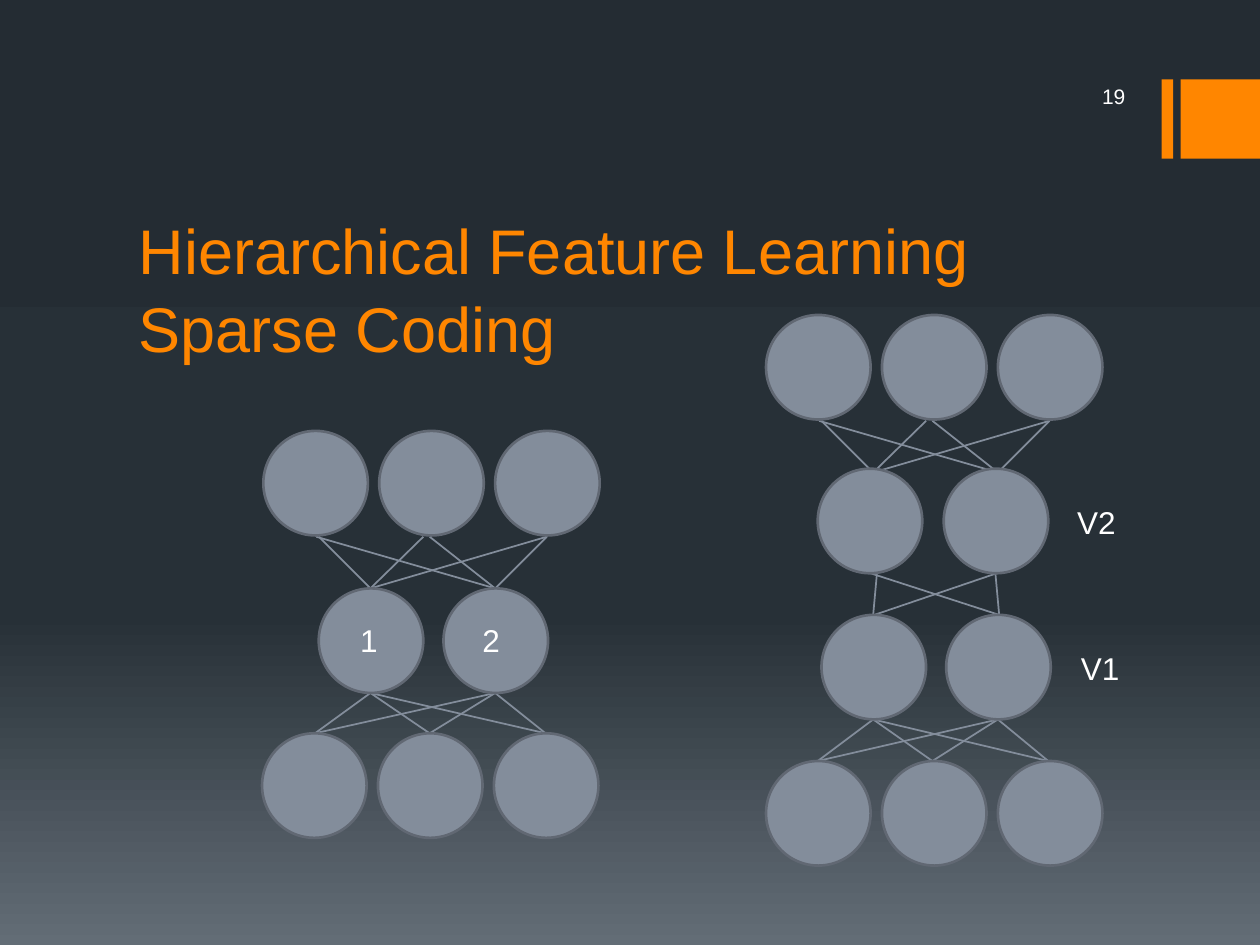
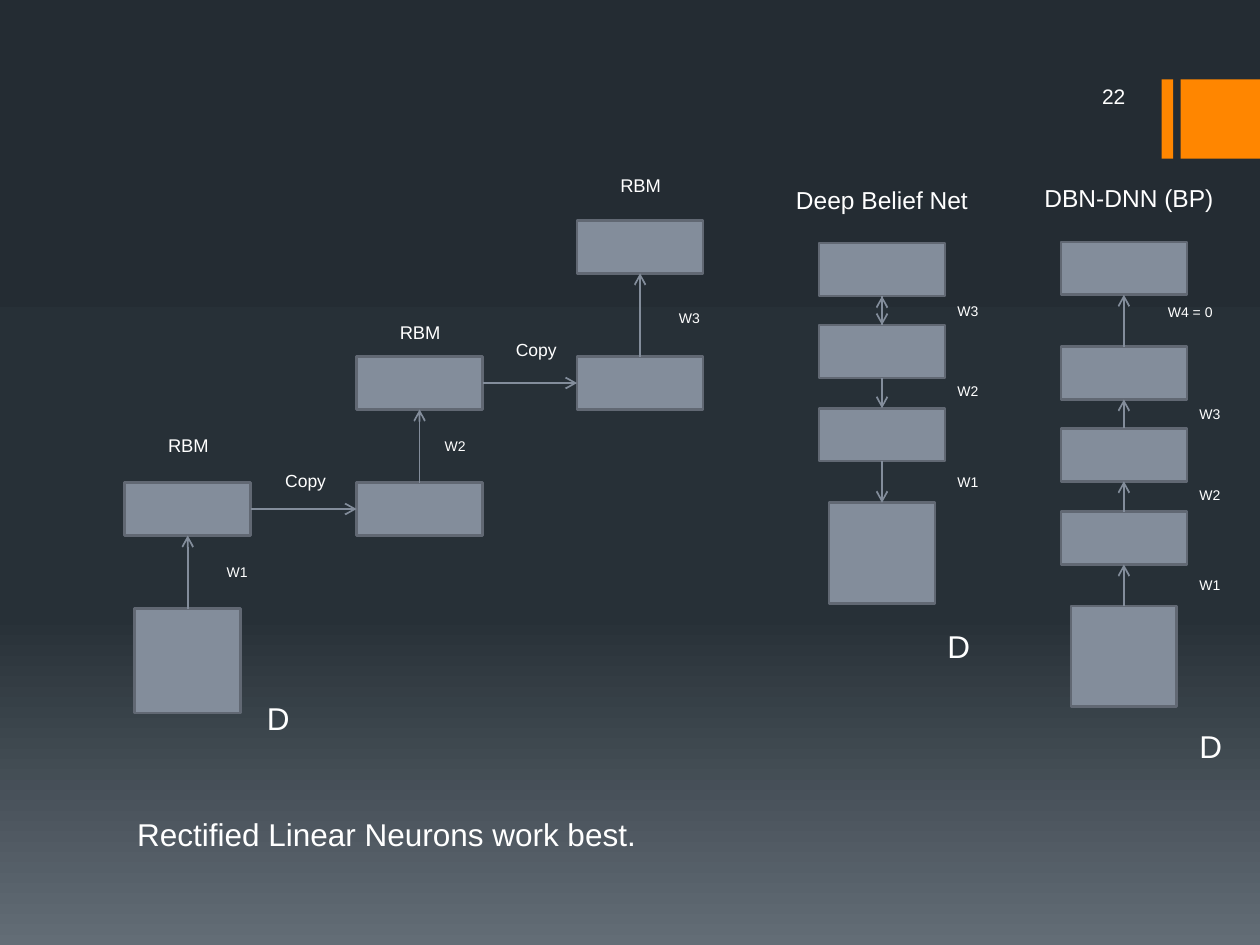
from copy import deepcopy

from pptx import Presentation
from pptx.dml.color import RGBColor
from pptx.enum.shapes import MSO_CONNECTOR as Connector
from pptx.enum.shapes import MSO_SHAPE as Preset
from pptx.enum.text import MSO_ANCHOR as Anchor
from pptx.enum.text import PP_ALIGN as Align
from pptx.oxml.ns import qn
from pptx.oxml.xmlchemy import OxmlElement
from pptx.util import Emu, Pt

PX = 9144
FONT = "Arial"
ORANGE = RGBColor(0xFF, 0x86, 0x00)
WHITE = RGBColor(0xFF, 0xFF, 0xFF)
NODE_FILL = RGBColor(0x83, 0x8D, 0x9B)
NODE_LINE = RGBColor(0x61, 0x68, 0x73)
BACKGROUND_STOPS = (
    (0, RGBColor(0x24, 0x2C, 0x33)),
    (0.65, RGBColor(0x27, 0x30, 0x37)),
    (1, RGBColor(0x63, 0x6D, 0x76)),
)

TOP, LEFT, BOTTOM, RIGHT = range(4)
CIRCLE = 83
BOX_WIDTH, BOX_HEIGHT = 100, 42
DATA_WIDTH = 84
DATA_INSET = (BOX_WIDTH - DATA_WIDTH) // 2

UPPER_STRANDS = ((45, 86), (43, 185), (128, 86), (226, 86), (133, 185), (226, 185))
MIDDLE_STRANDS = ((89, 86), (184, 87), (84, 186), (183, 186))
LOWER_STRANDS = ((86, 42), (185, 42), (86, 133), (185, 133), (185, 225), (86, 225))


def px(*lengths):
    return [Emu(length * PX) for length in lengths]


def format_text(text_frame, size, color=WHITE, align=Align.LEFT):
    for paragraph in text_frame.paragraphs:
        paragraph.alignment = align
        for run in paragraph.runs:
            run.font.name = FONT
            run.font.size = Pt(size)
            run.font.color.rgb = color


def add_label(slide, text, left, top, width, height, size, align=Align.LEFT):
    label = slide.shapes.add_textbox(*px(left, top, width, height))
    text_frame = label.text_frame
    text_frame.word_wrap = True
    text_frame.text = text
    format_text(text_frame, size, align=align)
    return label


def add_node(slide, preset, left, top, width, height):
    node = slide.shapes.add_shape(preset, *px(left, top, width, height))
    node.shadow.inherit = False
    node.fill.solid()
    node.fill.fore_color.rgb = NODE_FILL
    node.line.color.rgb = NODE_LINE
    node.line.width = Pt(1.5)
    return node


def add_box(slide, left, top):
    return add_node(slide, Preset.RECTANGLE, left, top, BOX_WIDTH, BOX_HEIGHT)


def add_line(slide, *ends):
    line = slide.shapes.add_connector(Connector.STRAIGHT, *px(*ends))
    line.line.color.rgb = NODE_FILL
    line.line.width = Pt(1)
    line.element.spPr.append(OxmlElement("a:effectLst"))
    return line


def add_arrow(slide, source, source_side, target, target_side):
    arrow = add_line(slide, 0, 0, 0, 0)
    arrow.begin_connect(source, source_side)
    arrow.end_connect(target, target_side)
    tail = OxmlElement("a:tailEnd")
    tail.set("type", "arrow")
    arrow.line._get_or_add_ln().append(tail)


def set_background(master):
    fill = master.background.fill
    fill.gradient()
    fill.gradient_angle = 270
    stop_list = next(master.element.cSld.iter(qn("a:gsLst")))
    stop_list.append(deepcopy(stop_list[0]))
    for stop, (position, color) in zip(fill.gradient_stops, BACKGROUND_STOPS):
        stop.position = position
        stop.color.rgb = color


def add_master_bands(master, slide):
    for shape_id, (left, width) in enumerate(((922, 9), (937, 63)), 101):
        band = slide.shapes.add_shape(Preset.RECTANGLE, *px(left, 63, width, 63))
        band.shadow.inherit = False
        band.fill.solid()
        band.fill.fore_color.rgb = ORANGE
        band.line.fill.background()
        band.element.nvSpPr.cNvPr.set("id", str(shape_id))
        master.shapes.element.append(band.element)


def add_page_number(slide, number):
    label = add_label(slide, str(number), 800, 60, 103, 33, 12, Align.RIGHT)
    label.text_frame.vertical_anchor = Anchor.MIDDLE


def set_title(slide, text):
    title = slide.shapes.title
    title.left, title.top, title.width, title.height = px(100, 169, 800, 126)
    text_frame = title.text_frame
    text_frame.text = text
    text_frame.vertical_anchor = Anchor.BOTTOM
    text_frame.paragraphs[0].line_spacing = 1.04
    format_text(text_frame, 36, ORANGE)


def add_network(slide, left, top, rows, strand_groups):
    for start, end, strands in strand_groups:
        for upper, lower in strands:
            add_line(slide, left + upper, top + start, left + lower, top + end)
    for row_left, row_top, count, pitch in rows:
        for index in range(count):
            circle_left = left + row_left + index * pitch
            add_node(slide, Preset.OVAL, circle_left, top + row_top, CIRCLE, CIRCLE)


def add_rbm_ladder(slide, left, top):
    data = add_node(slide, Preset.RECTANGLE, left + DATA_INSET, top + 350, DATA_WIDTH, 83)
    add_label(slide, "D", left + 103, top + 417, 41, 40, 18)
    steps = (
        (0, 250, 207, (71, 309)),
        (184, 150, 117, (244, 209)),
        (359, 42, 0, (430, 108)),
    )
    copy_labels = ((103, 235), (286, 131))
    visible = data
    for index, (x, hidden_top, name_top, (weight_x, weight_y)) in enumerate(steps):
        hidden = add_box(slide, left + x, top + hidden_top)
        add_arrow(slide, visible, TOP, hidden, BOTTOM)
        add_label(slide, "RBM", left + x + 9, top + name_top, 83, 29, 10.5, Align.CENTER)
        add_label(slide, f"W{index + 1}", left + weight_x, top + weight_y, 42, 24, 8)
        if index < len(copy_labels):
            copy_x, copy_y = copy_labels[index]
            visible = add_box(slide, left + steps[index + 1][0], top + hidden_top)
            add_arrow(slide, hidden, RIGHT, visible, LEFT)
            add_label(slide, "Copy", left + copy_x, top + copy_y, 81, 27, 10, Align.CENTER)


def add_stack(slide, left, top, name, name_shift, layer_tops, data_top, links, weights, data_label):
    add_label(slide, name, left - name_shift, top, 192, 34, 14, Align.CENTER)
    layers = [add_box(slide, left, top + layer_top) for layer_top in layer_tops]
    layers.append(
        add_node(slide, Preset.RECTANGLE, left + DATA_INSET, top + data_top, DATA_WIDTH, 80)
    )
    for source, target in links:
        sides = (BOTTOM, TOP) if source < target else (TOP, BOTTOM)
        add_arrow(slide, layers[source], sides[0], layers[target], sides[1])
    for text, x, y, width in weights:
        add_label(slide, text, left + x, top + y, width, 24, 8)
    data_x, data_y = data_label
    add_label(slide, "D", left + data_x, top + data_y, 41, 40, 18)


def build_sparse_coding(slide):
    set_title(slide, "Hierarchical Feature Learning\vSparse Coding")
    add_page_number(slide, 19)
    add_network(
        slide, 208, 342,
        ((1, 0, 3, 92), (45, 125, 2, 99), (0, 240, 3, 92)),
        ((84, 125, UPPER_STRANDS), (208, 240, LOWER_STRANDS)),
    )
    add_network(
        slide, 607, 250,
        ((1, 0, 3, 92), (42, 122, 2, 100), (45, 238, 2, 99), (1, 354, 3, 92)),
        ((84, 125, UPPER_STRANDS), (205, 238, MIDDLE_STRANDS), (321, 354, LOWER_STRANDS)),
    )
    for text, left, top, width in (
        ("1", 276, 488, 42), ("2", 373, 488, 42), ("V1", 848, 510, 57), ("V2", 845, 394, 59),
    ):
        add_label(slide, text, left, top, width, 40, 18)


def build_deep_belief(slide):
    add_page_number(slide, 22)
    add_rbm_ladder(slide, 99, 133)
    add_stack(
        slide, 650, 142, "Deep Belief Net", 46, (51, 116, 182), 257,
        ((0, 1), (1, 0), (1, 2), (2, 3)),
        (("W3", 100, 93, 42), ("W2", 100, 157, 42), ("W1", 100, 229, 42)),
        (92, 351),
    )
    add_stack(
        slide, 842, 140, "DBN-DNN (BP)", 42, (52, 135, 200, 266), 341,
        [(layer + 1, layer) for layer in range(4)],
        (("W4 = 0", 75, 96, 67), ("W3", 100, 177, 42), ("W2", 100, 241, 42), ("W1", 100, 313, 42)),
        (100, 432),
    )
    add_label(slide, "Rectified Linear Neurons work best.", 99, 642, 434, 40, 18)


def main():
    presentation = Presentation()
    presentation.slide_width, presentation.slide_height = px(1000, 750)
    master = presentation.slide_master
    title_only, blank = presentation.slide_layouts[5], presentation.slide_layouts[6]
    set_background(master)
    sparse_coding = presentation.slides.add_slide(title_only)
    add_master_bands(master, sparse_coding)
    build_sparse_coding(sparse_coding)
    build_deep_belief(presentation.slides.add_slide(blank))
    presentation.save("out.pptx")


if __name__ == "__main__":
    main()
